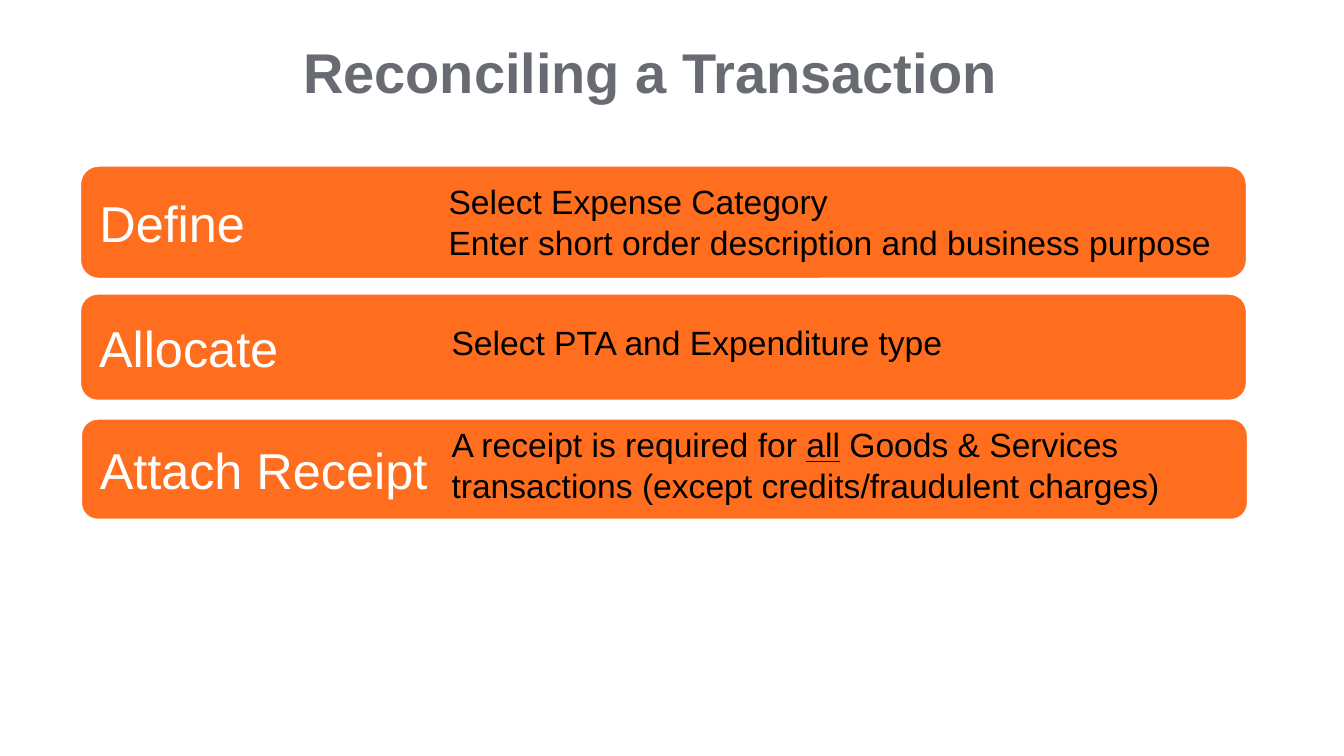
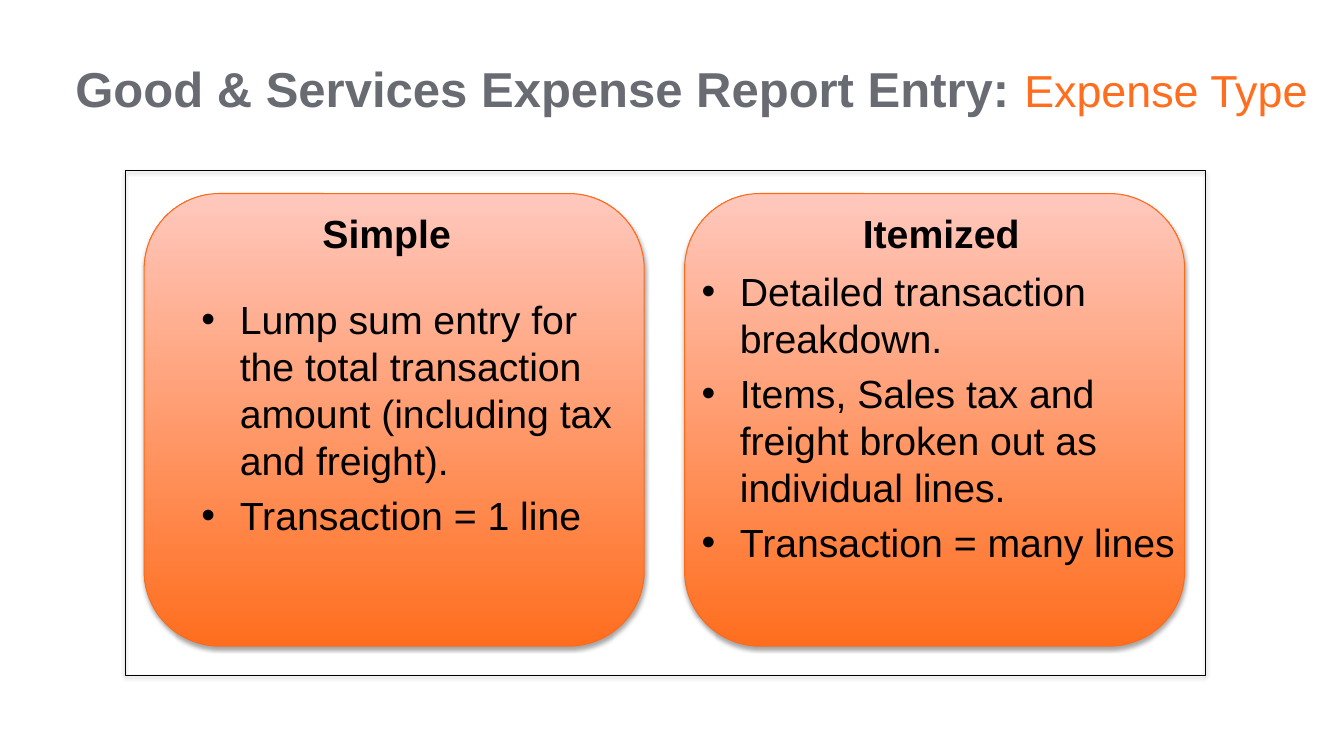
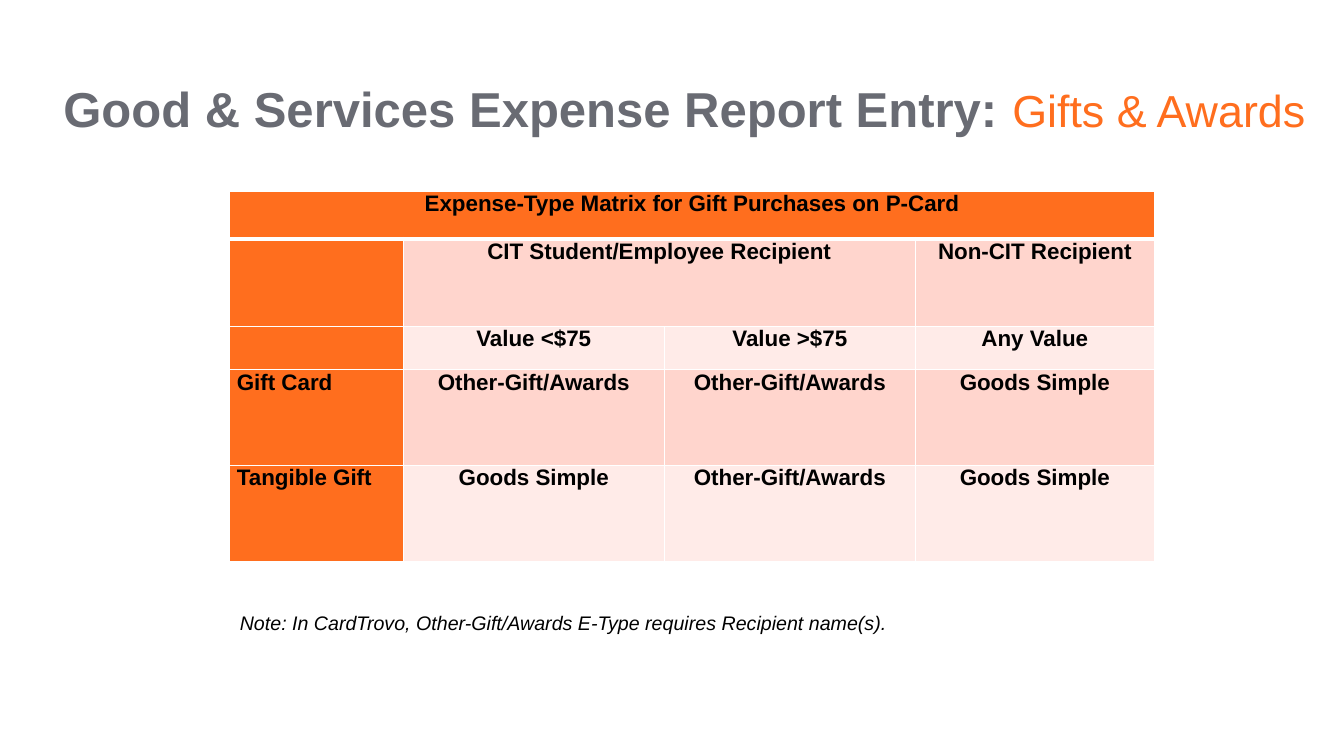
from dataclasses import dataclass

from lxml import etree
from pptx import Presentation
from pptx import util as u
from pptx.dml.color import RGBColor
from pptx.enum import shapes, text
from pptx.oxml import ns


@dataclass(frozen=True)
class Theme:
    font: str = "Arial"
    orange: str = "FF6E1E"
    edge: str = "FF6A18"
    peach: str = "FFC8BD"
    gray: str = "696B73"
    black: str = "000000"
    white: str = "FFFFFF"
    bands: tuple = ("FFD5CD", "FFEBE8")
    title: int = 40
    head: int = 35
    topic: int = 32
    step: int = 36
    card: int = 28
    body: int = 24
    cell: int = 16
    note: int = 14


T = Theme()
CENTER = text.PP_ALIGN.CENTER
LEFT = text.PP_ALIGN.LEFT
MIDDLE = text.MSO_ANCHOR.MIDDLE


def rgb(code):
    return RGBColor.from_string(code)


def assign(item, form):
    for key, val in form.items():
        setattr(item, key, val)


def node(parent, tag, **attrs):
    return etree.SubElement(parent, ns.qn(tag), {k: str(v) for k, v in attrs.items()})


def write(frame, paras, size, color=T.black, align=LEFT, bullet=False, **style):
    for i, runs in enumerate(paras):
        para = frame.paragraphs[0] if i == 0 else frame.add_paragraph()
        para.alignment = align
        if bullet:
            pad = u.Inches(0.38)
            props = para._p.get_or_add_pPr()
            assign(para, {"space_before": u.Pt(5.6 if i else 0)})
            props.set("marL", str(pad))
            props.set("indent", str(-pad))
            node(props, "a:buFont", typeface=T.font)
            node(props, "a:buChar", char="•")
        for words, extra in [(runs, {})] if isinstance(runs, str) else runs:
            form = {"name": T.font, "size": size, "color": color, **style, **extra}
            run = para.add_run()
            run.text = words
            run.font.color.rgb = rgb(form.pop("color"))
            form["size"] = u.Pt(form["size"])
            assign(run.font, form)


def label(slide, box, paras, size, wrap=True, anchor=text.MSO_ANCHOR.TOP, **style):
    frame = slide.shapes.add_textbox(*map(u.Inches, box)).text_frame
    assign(frame, {"word_wrap": wrap, "vertical_anchor": anchor})
    write(frame, paras, size, **style)


def shape(slide, kind, box, line, width):
    item = slide.shapes.add_shape(kind, *map(u.Inches, box))
    item.shadow.inherit = False
    item.line.color.rgb = rgb(line)
    item.line.width = u.Pt(width)
    return item


def shade(item):
    effects = item._element.spPr.find(ns.qn("a:effectLst"))
    shadow = node(effects, "a:outerShdw", blurRad=u.Pt(3.1), dist=u.Pt(1.8),
                  dir=5400000, rotWithShape=0)
    color = node(shadow, "a:srgbClr", val=T.black)
    node(color, "a:alpha", val=35000)


def topic(slide, box, name):
    runs = [("Good & Services Expense Report Entry: ", {}),
            (name, {"size": T.topic, "color": T.orange, "bold": False})]
    label(slide, box, [runs], T.head, color=T.gray, align=CENTER, bold=True)


def step(slide, box, name, detail, paras):
    bar = shape(slide, shapes.MSO_SHAPE.ROUNDED_RECTANGLE, box, T.white, 2)
    bar.fill.solid()
    bar.fill.fore_color.rgb = rgb(T.orange)
    frame = bar.text_frame
    assign(frame, {"margin_left": u.Inches(0.14), "vertical_anchor": MIDDLE})
    write(frame, [name], T.step, color=T.white)
    left, top, wide, high = detail
    label(slide, (box[0] + left, box[1] + top, wide, high), paras, T.body)


def card(slide, box, name, body, paras):
    left, top = box[:2]
    item = shape(slide, shapes.MSO_SHAPE.ROUNDED_RECTANGLE, box, T.edge, 0.75)
    item.fill.gradient()
    item.fill.gradient_angle = 90
    for stop, color in zip(item.fill.gradient_stops, (T.orange, T.peach)):
        stop.color.rgb = rgb(color)
    shade(item)
    label(slide, (left + 1.67, top + 0.11, 2.26, 0.57), [name], T.card, bold=True)
    dx, dy, wide, high = body
    label(slide, (left + dx, top + dy, wide, high), paras, T.card, bullet=True)


def border(cell, row):
    props = cell._tc.get_or_add_tcPr()
    thick = {("a:lnB", 0): 3, ("a:lnT", 1): 3}
    for i, tag in enumerate(("a:lnL", "a:lnR", "a:lnT", "a:lnB")):
        line = etree.Element(ns.qn(tag), w=str(u.Pt(thick.get((tag, row), 1))))
        node(node(line, "a:solidFill"), "a:srgbClr", val=T.white)
        props.insert(i, line)


def matrix(slide, box, cols, rows, data, spans):
    grid = slide.shapes.add_table(len(rows), len(cols), *map(u.Inches, box)).table
    for col, wide in zip(grid.columns, cols):
        col.width = u.Inches(wide)
    for row, high in zip(grid.rows, rows):
        row.height = u.Inches(high)
    for r, line in enumerate(data):
        for c, words in enumerate(line):
            cell = grid.cell(r, c)
            assign(cell, {"margin_left": u.Inches(0.07), "margin_right": u.Inches(0.07),
                          "margin_top": 0, "margin_bottom": 0})
            cell.fill.solid()
            fill = T.orange if r == 0 or c == 0 else T.bands[(r - 1) % 2]
            cell.fill.fore_color.rgb = rgb(fill)
            border(cell, r)
            if words:
                align = LEFT if r and c == 0 else CENTER
                write(cell.text_frame, [words], T.cell, align=align, bold=True)
    for r, first, last in spans:
        grid.cell(r, first).merge(grid.cell(r, last))


def steps(slide):
    step(slide, (0.79, 1.64, 11.58, 1.13), "Define", (3.56, 0.11, 8.32, 0.91),
         ["Select Expense Category", "Enter short order description and business purpose"])
    step(slide, (0.79, 2.91, 11.58, 1.07), "Allocate", (3.59, 0.23, 7.58, 0.5),
         ["Select PTA and Expenditure type"])
    step(slide, (0.8, 4.15, 11.58, 1.01), "Attach Receipt", (3.58, 0.01, 7.58, 0.91),
         [[("A receipt is required for ", {}), ("all", {"underline": True}),
           (" Goods & Services transactions (except credits/fraudulent charges)", {})]])
    label(slide, (2.42, 0.32, 8.05, 0.86), ["Reconciling a Transaction"], T.title,
          color=T.gray, align=CENTER, bold=True)


def types(slide):
    left, top, wide, high, gap = 1.43, 1.92, 4.96, 4.49, 0.4
    cards = [
        ("Simple", (0.47, 0.96, 4.42, 3.24),
         ["Lump sum entry for the total transaction amount (including tax and freight).",
          "Transaction = 1 line"]),
        ("Itemized", (0.07, 0.68, 5.1, 3.4),
         ["Detailed transaction breakdown.",
          "Items, Sales tax and freight broken out as individual lines.",
          "Transaction = many lines"]),
    ]
    for i, parts in enumerate(cards):
        card(slide, (left + i * (wide + gap), top, wide, high), *parts)
    frame = shape(slide, shapes.MSO_SHAPE.RECTANGLE, (1.24, 1.69, 10.72, 5.01), T.black, 0.75)
    frame.fill.background()
    shade(frame)
    topic(slide, (0.58, 0.53, 12.56, 0.86), "Expense Type")


def gifts(slide):
    other, goods = "Other-Gift/Awards", "Goods Simple"
    data = [
        ["Expense-Type Matrix for Gift Purchases on P-Card", "", "", ""],
        ["", "CIT Student/Employee Recipient", "", "Non-CIT Recipient"],
        ["", "Value <$75", "Value >$75", "Any Value"],
        ["Gift Card", other, other, goods],
        ["Tangible Gift", goods, other, goods],
    ]
    matrix(slide, (2.28, 1.9, 9.17, 3.67), (1.72, 2.59, 2.49, 2.37),
           (0.47, 0.87, 0.43, 0.95, 0.95), data, [(0, 0, 3), (1, 1, 2)])
    label(slide, (2.28, 6.01, 6.69, 0.34),
          ["Note: In CardTrovo, Other-Gift/Awards E-Type requires Recipient name(s)."],
          T.note, wrap=False, anchor=MIDDLE, italic=True)
    topic(slide, (0.51, 0.73, 12.56, 0.86), "Gifts & Awards")


def main():
    deck = Presentation()
    assign(deck, {"slide_width": u.Inches(13.33), "slide_height": u.Inches(7.5)})
    for build in (steps, types, gifts):
        build(deck.slides.add_slide(deck.slide_layouts[6]))
    deck.save("out.pptx")


if __name__ == "__main__":
    main()
